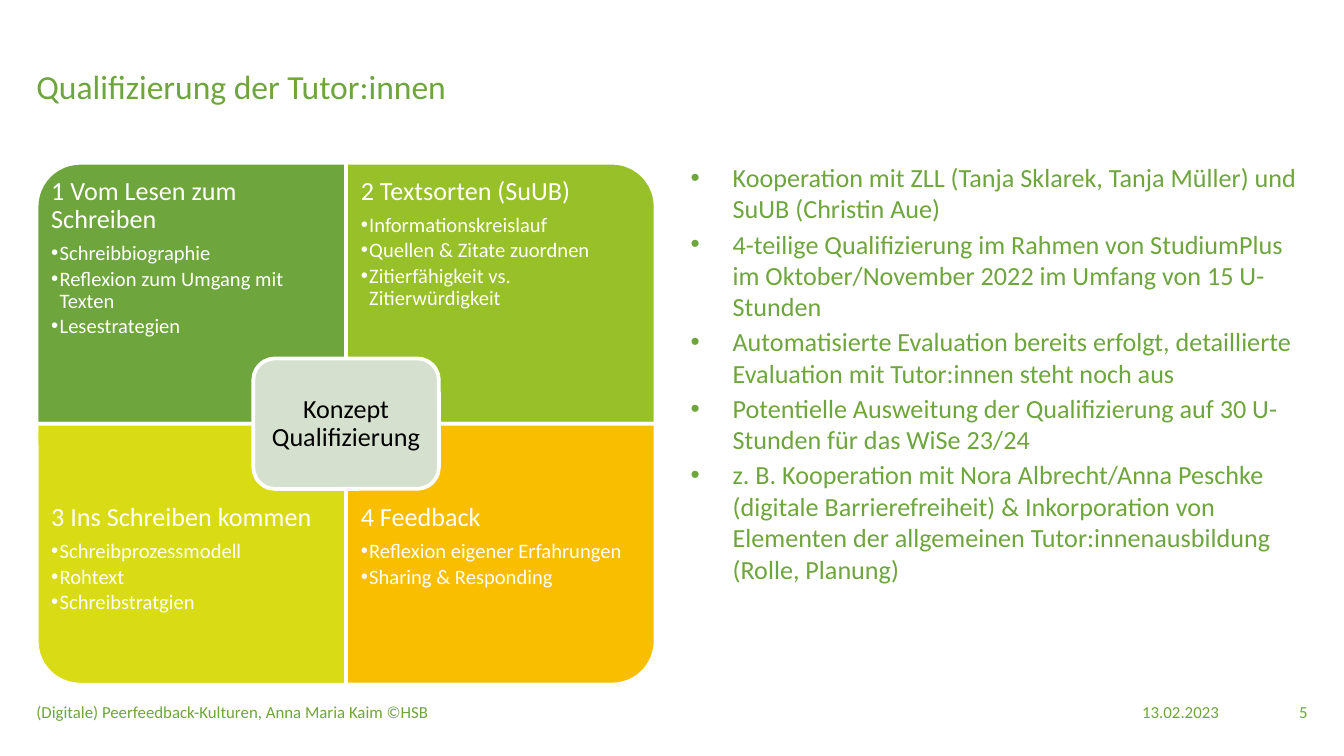
from dataclasses import dataclass

from lxml.etree import SubElement
from pptx import Presentation
from pptx.dml.color import RGBColor
from pptx.enum.shapes import MSO_SHAPE as Shape
from pptx.enum.text import MSO_ANCHOR as Anchor, MSO_AUTO_SIZE as AutoSize, PP_ALIGN as Align
from pptx.oxml.ns import qn
from pptx.util import Pt


@dataclass(frozen=True)
class Theme:
    font: str = "Calibri"
    green: str = "6EA53C"
    lime: str = "97C029"
    yellow: str = "D9DC15"
    amber: str = "FABE00"
    pale: str = "D5E1CE"
    white: str = "FFFFFF"
    black: str = "000000"
    title: float = 18
    body: float = 14
    detail: float = 11
    footer: float = 9


THEME = Theme()

TITLE = "Qualifizierung der Tutor:innen"
CENTRE = "Konzept Qualifizierung"
# Column, row, rotation, colour, heading, details
QUADRANTS = [
    (0, 0, 270, THEME.green, "1 Vom Lesen zum Schreiben",
     ["Schreibbiographie", "Reflexion zum Umgang mit Texten", "Lesestrategien"]),
    (1, 0, 0, THEME.lime, "2 Textsorten (SuUB)",
     ["Informationskreislauf", "Quellen & Zitate zuordnen",
      "Zitierfähigkeit vs. Zitierwürdigkeit"]),
    (0, 1, 180, THEME.yellow, "3 Ins Schreiben kommen",
     ["Schreibprozessmodell", "Rohtext", "Schreibstratgien"]),
    (1, 1, 90, THEME.amber, "4 Feedback",
     ["Reflexion eigener Erfahrungen", "Sharing & Responding"]),
]
POINTS = [
    "Kooperation mit ZLL (Tanja Sklarek, Tanja Müller) und SuUB (Christin Aue)",
    "4-teilige Qualifizierung im Rahmen von StudiumPlus im Oktober/November 2022 "
    "im Umfang von 15 U-Stunden",
    "Automatisierte Evaluation bereits erfolgt, detaillierte Evaluation mit "
    "Tutor:innen steht noch aus",
    "Potentielle Ausweitung der Qualifizierung auf 30 U-Stunden für das WiSe 23/24",
    "z. B. Kooperation mit Nora Albrecht/Anna Peschke (digitale Barrierefreiheit) "
    "& Inkorporation von Elementen der allgemeinen Tutor:innenausbildung "
    "(Rolle, Planung)",
]
# Left, width, alignment, text
FOOTERS = [
    (19.5, 535.5, Align.LEFT, "(Digitale) Peerfeedback-Kulturen, Anna Maria Kaim ©HSB"),
    (592.5, 60.5, Align.RIGHT, "13.02.2023"),
    (669.5, 31, Align.RIGHT, "5"),
]


def set_frame(frame, inset=0, anchor=Anchor.TOP):
    """Give a text frame its insets, anchor and wrapping."""
    values = {"margin_left": Pt(inset), "margin_top": Pt(inset),
              "margin_right": Pt(inset), "margin_bottom": Pt(inset),
              "vertical_anchor": anchor, "word_wrap": True,
              "auto_size": AutoSize.NONE}
    for name, value in values.items():
        setattr(frame, name, value)
    return frame


def add_text_box(page, box, inset=0, anchor=Anchor.TOP):
    shape = page.shapes.add_textbox(*map(Pt, box))
    return set_frame(shape.text_frame, inset, anchor)


def write(frame, text, size, color, first=True, hang=0, **layout):
    """Write one paragraph; hang is the indent of a bulleted one."""
    para = frame.paragraphs[0] if first else frame.add_paragraph()
    para.text = text
    for name, value in layout.items():
        setattr(para, name, value)
    if hang:
        props = para._p.get_or_add_pPr()
        props.set("marL", str(Pt(hang)))
        props.set("indent", str(-Pt(hang)))
        SubElement(props, qn("a:buFont")).set("typeface", "Arial")
        SubElement(props, qn("a:buChar")).set("char", "•")
    span = para.runs[0].font
    for name, value in {"name": THEME.font, "size": Pt(size)}.items():
        setattr(span, name, value)
    span.color.rgb = RGBColor.from_string(color)


def add_panel(page, kind, box, color):
    """Add a filled shape with a white outline."""
    shape = page.shapes.add_shape(kind, *map(Pt, box))
    shape.shadow.inherit = False
    shape.fill.solid()
    shape.fill.fore_color.rgb = RGBColor.from_string(color)
    shape.line.color.rgb = RGBColor.from_string(THEME.white)
    shape.line.width = Pt(2)
    return shape


def add_title(page, box):
    title = page.shapes.title
    for name, value in zip(("left", "top", "width", "height"), box):
        setattr(title, name, Pt(value))
    write(set_frame(title.text_frame), TITLE, THEME.title, THEME.green,
          alignment=Align.LEFT)


def add_quadrant(page, box, row, rotation, color, heading, details):
    left, top, width, height = box
    # A quarter turn swaps the sides around a fixed centre
    wide, high = (height, width) if rotation % 180 else (width, height)
    panel = add_panel(page, Shape.ROUND_1_RECTANGLE,
                      (left + (width - wide) / 2, top + (height - high) / 2, wide, high),
                      color)
    panel.rotation = rotation

    # Text fills the outer three quarters, clear of the centre
    text_height = height * 0.75
    text_top = top + row * (height - text_height)
    frame = add_text_box(page, (left, text_top, width, text_height), inset=7.85)
    write(frame, heading, THEME.body, THEME.white,
          line_spacing=0.9, space_after=Pt(THEME.body * 0.35))
    for detail in details:
        write(frame, detail, THEME.detail, THEME.white, first=False, hang=4.5,
              line_spacing=0.9, space_after=Pt(THEME.detail * 0.15))


def add_matrix(page, box):
    left, top, width, height = box
    cell_width, cell_height = width / 2, height / 2
    for column, row, *content in QUADRANTS:
        cell = (left + column * cell_width, top + row * cell_height,
                cell_width, cell_height)
        add_quadrant(page, cell, row, *content)

    # Centre label
    wide, high = width * 0.3, height * 0.25
    centre = add_panel(page, Shape.ROUNDED_RECTANGLE,
                       (left + (width - wide) / 2, top + (height - high) / 2, wide, high),
                       THEME.pale)
    write(set_frame(centre.text_frame, 4.2, Anchor.MIDDLE), CENTRE, THEME.body,
          THEME.black, alignment=Align.CENTER, line_spacing=0.9)


def add_points(page, box):
    frame = add_text_box(page, box)
    for index, point in enumerate(POINTS):
        write(frame, point, THEME.body, THEME.green, first=index == 0, hang=22.5,
              space_before=Pt(2 if index else 0))


def add_footer(page, top, height):
    for left, width, align, text in FOOTERS:
        frame = add_text_box(page, (left, top, width, height), anchor=Anchor.MIDDLE)
        write(frame, text, THEME.footer, THEME.green, alignment=align)


def main():
    deck = Presentation()
    deck.slide_width, deck.slide_height = Pt(720), Pt(405)
    page = deck.slides.add_slide(deck.slide_layouts[5])
    add_title(page, (19.5, 35.5, 680.5, 42.5))
    add_matrix(page, (19.6, 87.2, 331.6, 279.6))
    add_points(page, (370, 86.5, 333, 266.5))
    add_footer(page, 375.5, 11.5)
    deck.save("out.pptx")


if __name__ == "__main__":
    main()
